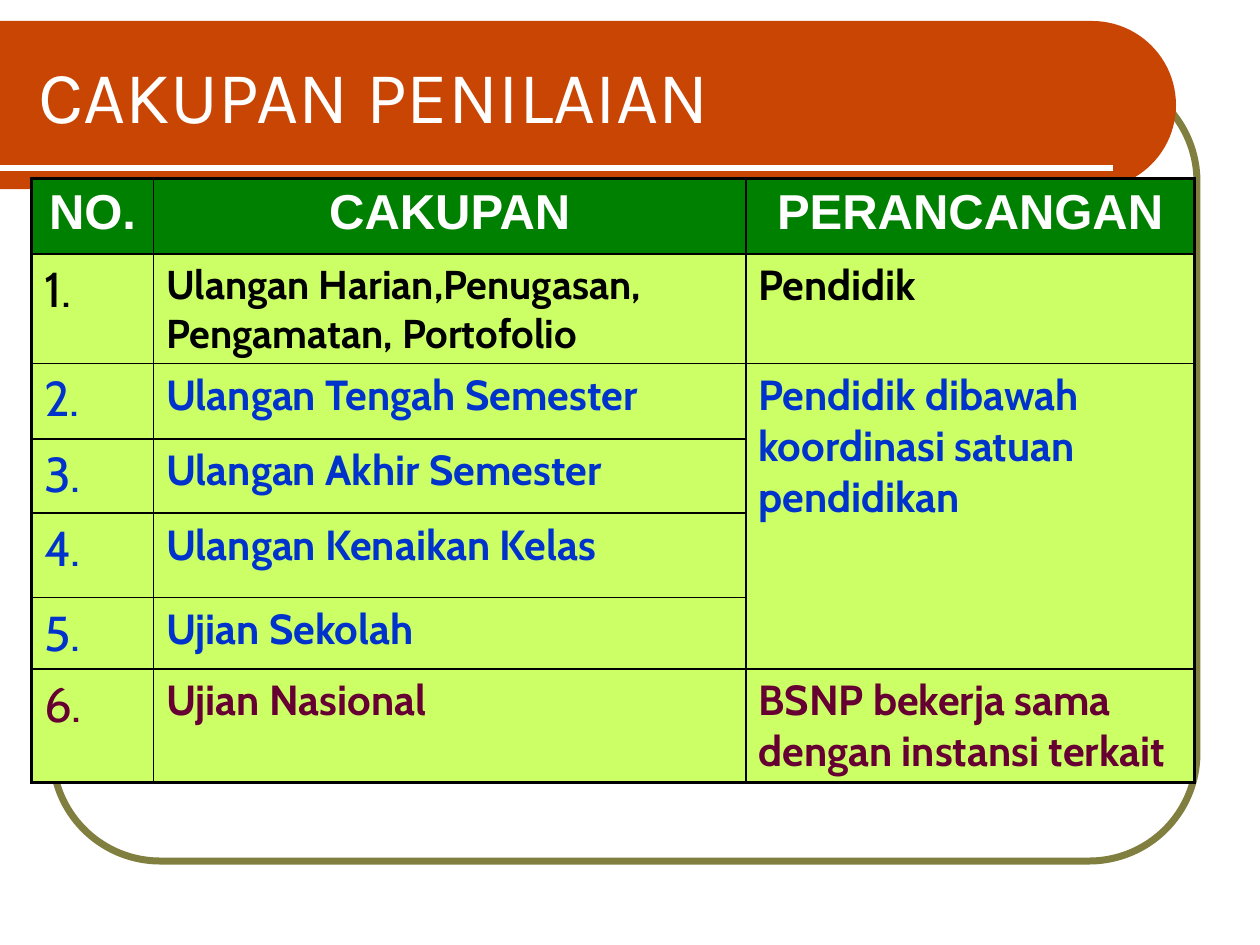
from math import cos, pi, sin

from lxml import etree
from pptx import Presentation
from pptx.dml.color import RGBColor
from pptx.enum.shapes import MSO_CONNECTOR, MSO_SHAPE
from pptx.enum.text import MSO_ANCHOR, PP_ALIGN
from pptx.oxml.ns import qn
from pptx.util import Pt

WHITE = RGBColor(0xFF, 0xFF, 0xFF)
BLACK = RGBColor(0x00, 0x00, 0x00)
OLIVE = RGBColor(0x81, 0x7F, 0x3F)
ORANGE = RGBColor(0xC9, 0x45, 0x03)
GREEN = RGBColor(0x00, 0x80, 0x00)
LIME = RGBColor(0xCC, 0xFF, 0x66)
BLUE = RGBColor(0x00, 0x33, 0xCC)
MAROON = RGBColor(0x66, 0x00, 0x33)

TITLE = "CAKUPAN PENILAIAN"
HEADERS = ["NO.", "CAKUPAN", "PERANCANGAN"]
# scope, planner (None continues the cell above), colour, size of the scope text
ASSESSMENTS = [
    ("Ulangan Harian,Penugasan, Pengamatan, Portofolio", "Pendidik", BLACK, 23),
    ("Ulangan Tengah Semester", "Pendidik dibawah koordinasi satuan pendidikan", BLUE, 24),
    ("Ulangan Akhir Semester", None, BLUE, 24),
    ("Ulangan Kenaikan Kelas", None, BLUE, 24),
    ("Ujian Sekolah", None, BLUE, 24),
    ("Ujian Nasional", "BSNP bekerja sama dengan instansi terkait", MAROON, 24),
]
COLUMN_WIDTHS = [69.8, 338.4, 256.3]
ROW_HEIGHTS = [43.2, 45.4, 43.2, 42.5, 48.2, 37.4, 54.7]
SHARED_ROWS = (2, 5)
THIN, THICK = 1, 2.25

BAND_TOP, BAND_HEIGHT, BAND_RIGHT = 12, 96, 672
ARC_STEPS = 48


def add_frame(slide):
    frame = slide.shapes.add_shape(
        MSO_SHAPE.ROUNDED_RECTANGLE, Pt(30), Pt(42), Pt(654), Pt(450))
    frame.adjustments[0] = 0.137
    frame.shadow.inherit = False
    frame.fill.background()
    frame.line.color.rgb = OLIVE
    frame.line.width = Pt(4)


def add_title_band(slide):
    """Draw a band that is square on the left and a half circle on the right."""
    radius = BAND_HEIGHT / 2
    centre_x, centre_y = BAND_RIGHT - radius, BAND_TOP + radius
    angles = [pi * step / ARC_STEPS - pi / 2 for step in range(ARC_STEPS + 1)]
    arc = [(Pt(centre_x + radius * cos(angle)), Pt(centre_y + radius * sin(angle)))
           for angle in angles]
    builder = slide.shapes.build_freeform(Pt(0), Pt(BAND_TOP))
    builder.add_line_segments(arc + [(Pt(0), Pt(BAND_TOP + BAND_HEIGHT))], close=True)
    band = builder.convert_to_shape()
    band.shadow.inherit = False
    band.fill.solid()
    band.fill.fore_color.rgb = ORANGE
    band.line.fill.background()


def add_rule(slide):
    rule = slide.shapes.add_connector(
        MSO_CONNECTOR.STRAIGHT, Pt(0), Pt(96), Pt(636), Pt(96))
    rule.line.color.rgb = WHITE
    rule.line.width = Pt(3)
    etree.SubElement(rule._element.spPr, qn("a:effectLst"))


def add_run(paragraph, text, font_name, size, color, bold=False):
    run = paragraph.add_run()
    run.text = text
    run.font.name = font_name
    run.font.size = Pt(size)
    run.font.bold = bold
    run.font.color.rgb = color


def add_title(slide):
    box = slide.shapes.add_textbox(Pt(15), Pt(18), Pt(631.5), Pt(72))
    box.text_frame.word_wrap = True
    box.text_frame.vertical_anchor = MSO_ANCHOR.MIDDLE
    add_run(box.text_frame.paragraphs[0], TITLE, "Karla", 42, WHITE)


def set_border(cell, side, width):
    properties = cell._tc.get_or_add_tcPr()
    line = etree.SubElement(properties, qn(f"a:ln{side}"), w=str(Pt(width)))
    fill = etree.SubElement(line, qn("a:solidFill"))
    etree.SubElement(fill, qn("a:srgbClr"), val=str(BLACK))


def style_cell(table, row, column):
    """Give a thick border on the table's outer edge and a thin one inside."""
    cell = table.cell(row, column)
    outer_edges = {
        "L": column == 0,
        "R": column == len(COLUMN_WIDTHS) - 1,
        "T": row == 0,
        "B": row == len(ROW_HEIGHTS) - 1,
    }
    for side, is_outer in outer_edges.items():
        set_border(cell, side, THICK if is_outer else THIN)
    cell.fill.solid()
    cell.fill.fore_color.rgb = GREEN if row == 0 else LIME


def write_cell(cell, text, font_name, size, color, bold, alignment=PP_ALIGN.LEFT):
    paragraph = cell.text_frame.paragraphs[0]
    paragraph.alignment = alignment
    space_before = etree.Element(qn("a:spcBef"))
    etree.SubElement(space_before, qn("a:spcPct"), val="20000")
    paragraph._p.get_or_add_pPr().insert(0, space_before)
    add_run(paragraph, text, font_name, size, color, bold)


def add_assessment_table(slide):
    table = slide.shapes.add_table(
        len(ROW_HEIGHTS), len(COLUMN_WIDTHS), Pt(18), Pt(102),
        Pt(sum(COLUMN_WIDTHS)), Pt(sum(ROW_HEIGHTS))).table
    table.first_row = False
    table.horz_banding = False
    for column, width in enumerate(COLUMN_WIDTHS):
        table.columns[column].width = Pt(width)
    for row, height in enumerate(ROW_HEIGHTS):
        table.rows[row].height = Pt(height)
        for column in range(len(COLUMN_WIDTHS)):
            style_cell(table, row, column)
    first, last = SHARED_ROWS
    table.cell(first, 2).merge(table.cell(last, 2))

    for column, header in enumerate(HEADERS):
        write_cell(table.cell(0, column), header, "Arial", 28, WHITE, True, PP_ALIGN.CENTER)
    for number, (scope, planner, color, size) in enumerate(ASSESSMENTS, start=1):
        write_cell(table.cell(number, 0), f"{number}.", "Cabin", 28, color, False)
        write_cell(table.cell(number, 1), scope, "Cabin", size, color, True)
        if planner:
            write_cell(table.cell(number, 2), planner, "Cabin", 24, color, True)


def main():
    presentation = Presentation()
    presentation.slide_width = Pt(720)
    presentation.slide_height = Pt(540)
    slide = presentation.slides.add_slide(presentation.slide_layouts[6])
    add_frame(slide)
    add_title_band(slide)
    add_rule(slide)
    add_title(slide)
    add_assessment_table(slide)
    presentation.save("out.pptx")


if __name__ == "__main__":
    main()
